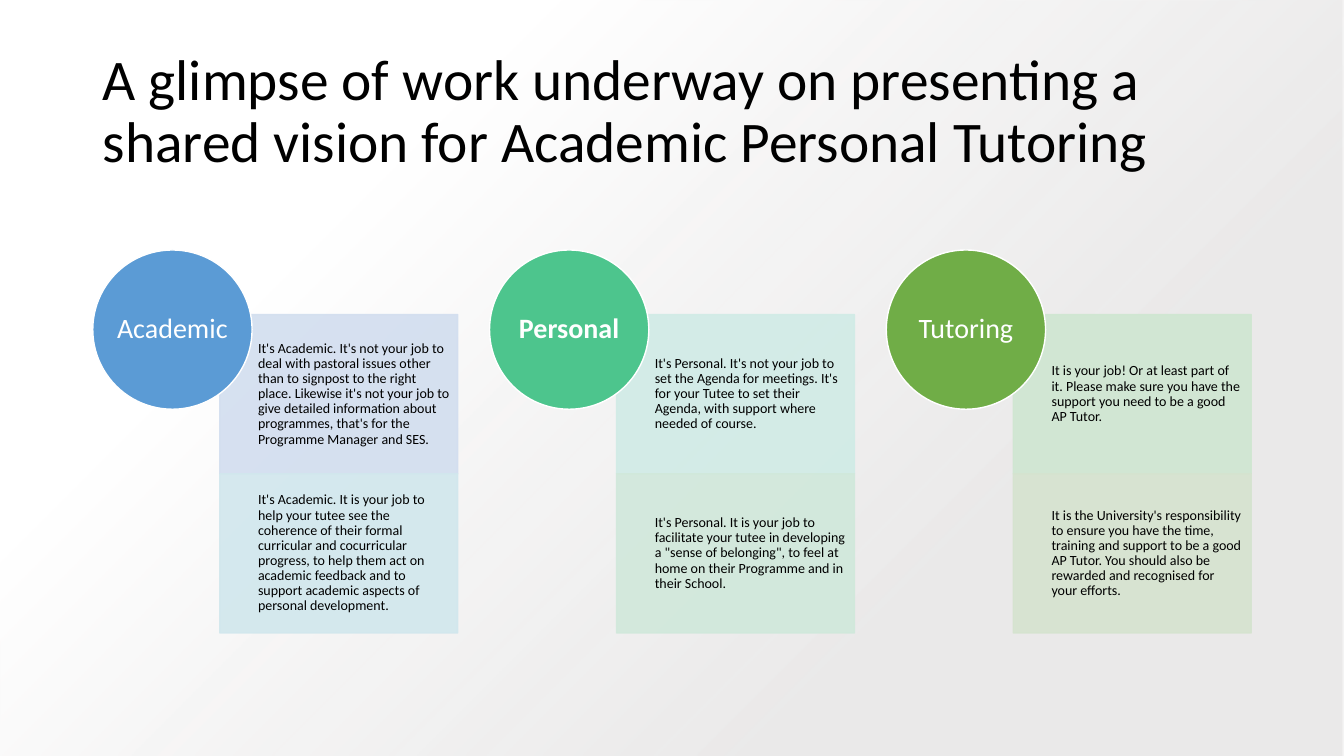
from pptx import Presentation, oxml
from pptx import util as u
from pptx.dml.color import RGBColor
from pptx.enum import shapes, text
from pptx.oxml import ns

In = u.Inches
FONT = "Calibri"
DIAM = 1.58     # circle diameter and height of each note
STEP = 3.935    # distance from one column to the next

COLS = [
    ("Academic", "5B9BD5", False, [
        ("D2DEEF", "It's Academic. It's not your job to deal with pastoral issues "
         "other than to signpost to the right place. Likewise it's not your job to "
         "give detailed information about programmes, that's for the Programme "
         "Manager and SES."),
        ("D1E7ED", "It's Academic. It is your job to help your tutee see the "
         "coherence of their formal curricular and cocurricular progress, to help "
         "them act on academic feedback and to support academic aspects of "
         "personal development.")]),
    ("Personal", "4DC58D", True, [
        ("D0EBE6", "It's Personal. It's not your job to set the Agenda for meetings. "
         "It's for your Tutee to set their Agenda, with support where needed of "
         "course."),
        ("D0E8DB", "It's Personal. It is your job to facilitate your tutee in "
         "developing a \"sense of belonging\", to feel at home on their Programme "
         "and in their School.")]),
    ("Tutoring", "70AD47", False, [
        ("CFE6D1", "It is your job! Or at least part of it. Please make sure you "
         "have the support you need to be a good AP Tutor."),
        ("D5E3CF", "It is the University's responsibility to ensure you have the "
         "time, training and support to be a good AP Tutor. You should also be "
         "rewarded and recognised for your efforts.")]),
]


def rgb(code):
    return RGBColor.from_string(code)


def write(shape, words, size=10, color="000000", bold=False,
          align=text.PP_ALIGN.LEFT, pads=(0, 0, 0, 0)):
    frame = shape.text_frame
    frame.word_wrap = True
    frame.vertical_anchor = text.MSO_ANCHOR.MIDDLE
    (frame.margin_left, frame.margin_top,
     frame.margin_right, frame.margin_bottom) = map(In, pads)
    para = frame.paragraphs[0]
    para.alignment = align
    para.line_spacing = 0.9
    run = para.add_run()
    run.text = words
    font = run.font
    font.name, font.size, font.bold = FONT, u.Pt(size), bold
    font.color.rgb = rgb(color)


def draw(slide, kind, box, fill, line=None, alpha=100):
    shape = slide.shapes.add_shape(kind, *map(In, box))
    shape.shadow.inherit = False
    shape.fill.solid()
    shape.fill.fore_color.rgb = rgb(fill)
    if line:
        shape.line.color.rgb = rgb(line)
        shape.line.width = u.Pt(1)
    else:
        shape.line.fill.background()
    # Transparency of fill and line
    if alpha < 100:
        for tint in shape.element.spPr.iter(ns.qn("a:srgbClr")):
            oxml.parse_xml(f'<a:alpha {ns.nsdecls("a")} val="{alpha * 1000}"/>')
            tint.append(oxml.parse_xml(
                f'<a:alpha {ns.nsdecls("a")} val="{alpha * 1000}"/>'))
    return shape


def back(slide, box):
    # Round gradient spreading from the bottom right corner
    shape = draw(slide, shapes.MSO_SHAPE.RECTANGLE, box, "FFFFFF")
    props = shape.element.spPr
    props.replace(props.find(ns.qn("a:solidFill")), oxml.parse_xml(
        f'<a:gradFill {ns.nsdecls("a")} rotWithShape="1"><a:gsLst>'
        '<a:gs pos="28000"><a:srgbClr val="E7E6E6"><a:alpha val="84000"/>'
        '</a:srgbClr></a:gs><a:gs pos="74000"><a:srgbClr val="FFFFFF"/></a:gs>'
        '</a:gsLst><a:path path="circle"><a:fillToRect l="100000" t="100000"/>'
        '</a:path></a:gradFill>'))


def title(slide, box, words):
    write(slide.shapes.add_textbox(*map(In, box)), words, size=41,
          pads=(0.1, 0.05, 0.1, 0.05))


def column(slide, left, top, name, color, bold, notes):
    # Stacked notes
    for row, (tint, words) in enumerate(notes):
        box = left + 1.26, top + 0.64 + row * DIAM, 2.36, DIAM
        note = draw(slide, shapes.MSO_SHAPE.RECTANGLE, box, tint, tint, 90)
        write(note, words, pads=(0.38, 0.08, 0.08, 0.08))
    # Circle over their corner
    disc = draw(slide, shapes.MSO_SHAPE.OVAL, (left, top, DIAM, DIAM),
                color, "FFFFFF")
    write(disc, name, size=20, color="FFFFFF", bold=bold,
          align=text.PP_ALIGN.CENTER)


def main():
    deck = Presentation()
    deck.slide_width, deck.slide_height = In(13.33), In(7.5)
    slide = deck.slides.add_slide(deck.slide_layouts[6])
    back(slide, (0, 0, 13.33, 7.5))
    title(slide, (0.92, 0.4, 11.5, 1.45), "A glimpse of work underway on "
          "presenting a shared vision for Academic Personal Tutoring")
    for i, col in enumerate(COLS):
        column(slide, 0.92 + i * STEP, 2.48, *col)
    deck.save("out.pptx")


if __name__ == "__main__":
    main()
